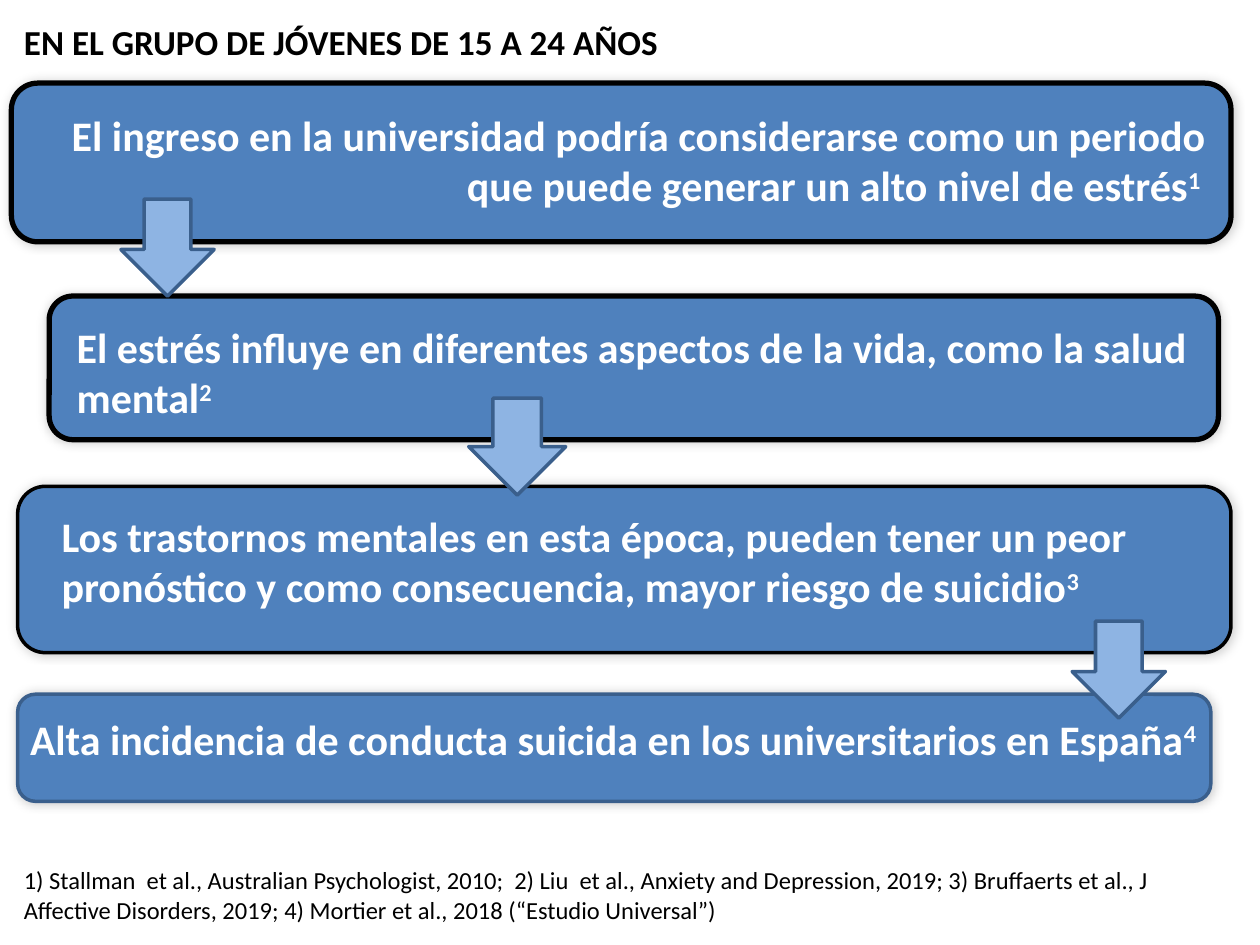
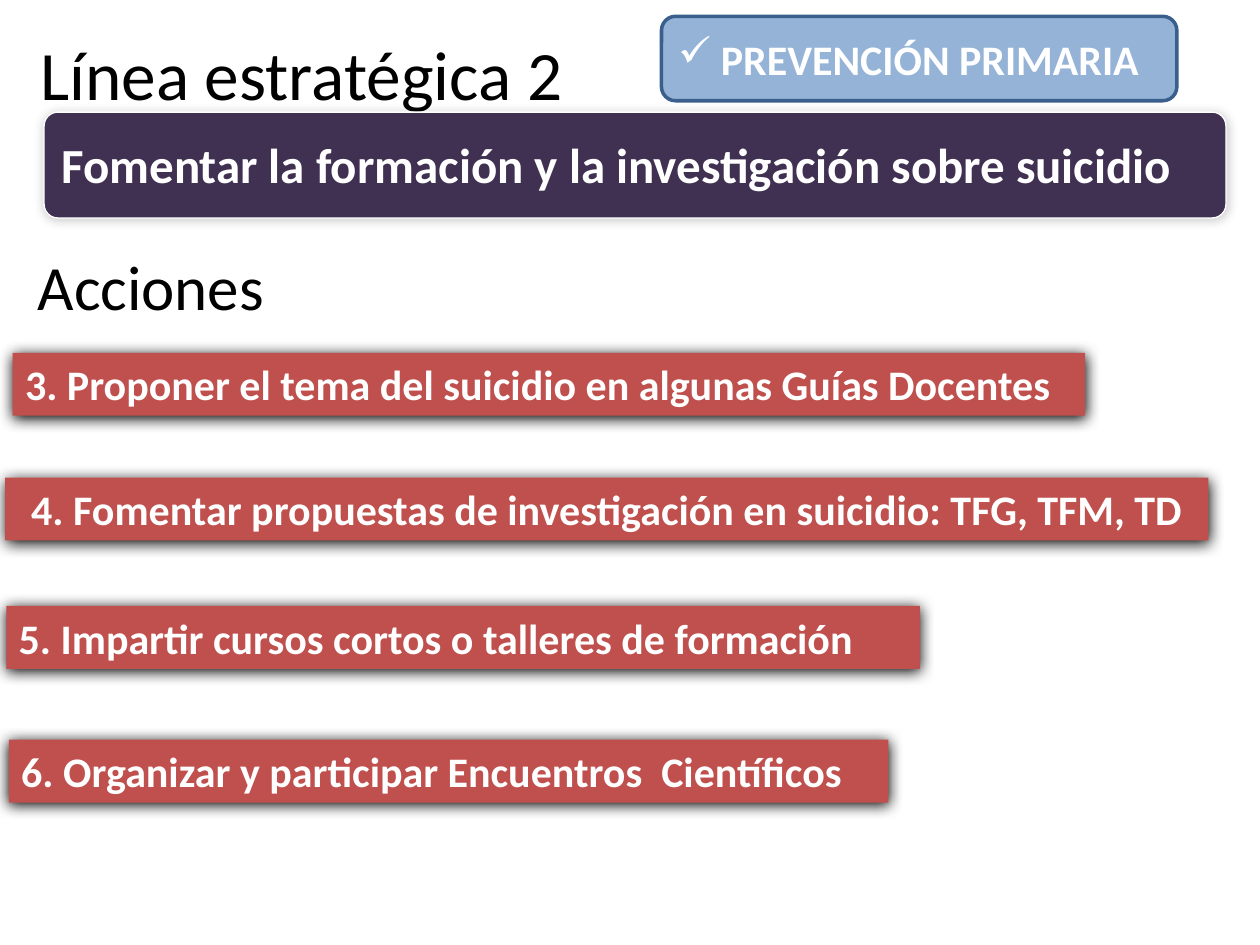
from lxml import etree
from pptx import Presentation, util as u
from pptx.dml.color import RGBColor
from pptx.enum import shapes, text
from pptx.oxml import ns

BLACK = RGBColor(0, 0, 0)
WHITE = RGBColor(255, 255, 255)
BLUE = RGBColor(0x4F, 0x81, 0xBD)
EDGE = RGBColor(0x3A, 0x5F, 0x8C)
SKY = RGBColor(0x8E, 0xB4, 0xE3)
PALE = RGBColor(0x95, 0xB3, 0xD7)
PLUM = RGBColor(0x40, 0x31, 0x52)
RED = RGBColor(0xC0, 0x50, 0x4D)
FONT = "Calibri"
WIDE, HIGH = 10, 7.5
ROUND = shapes.MSO_SHAPE.ROUNDED_RECTANGLE
RECT = shapes.MSO_SHAPE.RECTANGLE
DOWN = shapes.MSO_SHAPE.DOWN_ARROW
LEFT, MID, RIGHT = text.PP_ALIGN.LEFT, text.PP_ALIGN.CENTER, text.PP_ALIGN.RIGHT
SOFT = (20, 6, 0, 225)
HARD = (100, 8.5, 1, 90)

HEAD = "EN EL GRUPO DE JÓVENES DE 15 A 24 AÑOS"
STEPS = [
    dict(box=(0.09, 0.66, 9.68, 1.26), edge=(BLACK, 3), say=(0.39, 0.82, 9.28, 0.91),
         words="El ingreso en la universidad podría considerarse como un periodo "
               "que puede generar un alto nivel de estrés", note="1 ", side=RIGHT),
    dict(box=(0.39, 2.35, 9.28, 1.14), edge=(BLACK, 3), say=(0.51, 2.5, 9.48, 0.91),
         words="El estrés influye en diferentes aspectos de la vida, como la salud mental",
         note="2", side=LEFT),
    dict(box=(0.14, 3.86, 9.63, 1.32), edge=(BLACK, 2), say=(0.39, 4, 9.45, 0.91),
         words="Los trastornos mentales en esta época, pueden tener un peor pronóstico "
               "y como consecuencia, mayor riesgo de suicidio", note="3", side=LEFT),
    dict(box=(0.14, 5.51, 9.47, 0.85), edge=(EDGE, 2), say=(0.14, 5.61, 9.6, 0.5),
         words="Alta incidencia de conducta suicida en los universitarios en España",
         note="4", side=LEFT),
]
ARROWS = [(0.96, 1.58, 0.74, 0.77), (3.72, 3.16, 0.77, 0.77), (8.51, 4.93, 0.74, 0.77)]
CITES = ("1) Stallman  et al., Australian Psychologist, 2010;  2) Liu  et al., Anxiety and "
         "Depression, 2019; 3) Bruffaerts et al., J Affective Disorders, 2019; "
         "4) Mortier et al., 2018 (“Estudio Universal”)")

LINE = "Línea estratégica 2"
GOAL = "Fomentar la formación y la investigación sobre suicidio"
BADGE = "PREVENCIÓN PRIMARIA"
ACTS = [
    (0.1, 2.8, 8.51, LEFT, "3. Proponer el tema del suicidio en algunas Guías Docentes"),
    (0.04, 3.79, 9.55, MID, "4. Fomentar propuestas de investigación en suicidio: TFG, TFM, TD"),
    (0.05, 4.81, 7.25, LEFT, "5. Impartir cursos cortos o talleres de formación"),
    (0.07, 5.87, 6.98, LEFT, "6. Organizar y participar Encuentros  Científicos"),
]
ACT_H = 0.5


def place(box):
    return [u.Inches(n) for n in box]


def write(shape, words, size, color=WHITE, bold=True, side=LEFT, note="",
          anchor=text.MSO_ANCHOR.TOP):
    frame = shape.text_frame
    frame.word_wrap = True
    frame.auto_size = text.MSO_AUTO_SIZE.NONE
    frame.vertical_anchor = anchor
    para = frame.paragraphs[0]
    para.alignment = side
    for part in filter(None, (words, note)):
        run = para.add_run()
        run.text = part
        font = run.font
        font.name, font.size, font.bold = FONT, u.Pt(size), bold
        font.color.rgb = color
    if note:
        run.font._element.set("baseline", "30000")
    return para


def label(slide, box, words, size, **look):
    return write(slide.shapes.add_textbox(*place(box)), words, size, **look)


def title(slide, box, words, size, **look):
    head = slide.shapes.title
    head.left, head.top, head.width, head.height = place(box)
    write(head, words, size, color=BLACK, **look)


def block(slide, kind, box, fill, edge=None, shade=None, bend=None):
    shape = slide.shapes.add_shape(kind, *place(box))
    if bend:
        shape.adjustments[0] = bend
    shape.fill.solid()
    shape.fill.fore_color.rgb = fill
    if edge:
        shape.line.color.rgb, shape.line.width = edge[0], u.Pt(edge[1])
    else:
        shape.line.fill.background()
    shape.shadow.inherit = False
    if shade:
        cast(shape, *shade)
    return shape


def cast(shape, alpha, blur, dist, angle):
    host = shape._element.spPr.find(ns.qn("a:effectLst"))
    drop = etree.SubElement(host, ns.qn("a:outerShdw"), blurRad=str(u.Pt(blur)),
                            dist=str(u.Pt(dist)), dir=str(angle * 60000), rotWithShape="0")
    tone = etree.SubElement(drop, ns.qn("a:srgbClr"), val=str(BLACK))
    etree.SubElement(tone, ns.qn("a:alpha"), val=str(alpha * 1000))


def tick(para, gap):
    props = para._p.get_or_add_pPr()
    props.set("marL", str(u.Inches(gap)))
    props.set("indent", str(-u.Inches(gap)))
    etree.SubElement(props, ns.qn("a:buChar"), char="✓")


def chain(slide):
    title(slide, (0.09, 0.11, 7.17, 0.44), HEAD, 20)
    for step in STEPS:
        block(slide, ROUND, step["box"], BLUE, step["edge"], SOFT)
        label(slide, step["say"], step["words"], 24, note=step["note"], side=step["side"])
    for spot in ARROWS:
        block(slide, DOWN, spot, SKY, (EDGE, 2))
    label(slide, (0.09, 6.82, 9.68, 0.56), CITES, 14, color=BLACK, bold=False)


def plan(slide):
    mid = text.MSO_ANCHOR.MIDDLE
    title(slide, (0.22, 0.16, 4.86, 0.83), LINE, 39.6, bold=False, anchor=mid)
    block(slide, ROUND, (0.35, 0.89, 9.38, 0.84), PLUM, (WHITE, 0.75), SOFT, 0.13)
    label(slide, (0.3, 1.02, 9.18, 0.57), GOAL, 28, side=MID)
    label(slide, (0.2, 1.85, 2.02, 0.83), "Acciones", 36, color=BLACK, bold=False, anchor=mid)
    for left, top, wide, side, words in ACTS:
        bar = block(slide, RECT, (left, top, wide, ACT_H), RED, shade=HARD)
        write(bar, words, 24, side=side)
    badge = block(slide, ROUND, (5.25, 0.13, 4.09, 0.67), PALE, (EDGE, 2))
    tick(write(badge, BADGE, 24, anchor=mid), 0.34)


def main():
    deck = Presentation()
    deck.slide_width, deck.slide_height = place((WIDE, HIGH))
    for draw in (chain, plan):
        draw(deck.slides.add_slide(deck.slide_layouts[5]))
    deck.save("out.pptx")


if __name__ == "__main__":
    main()
